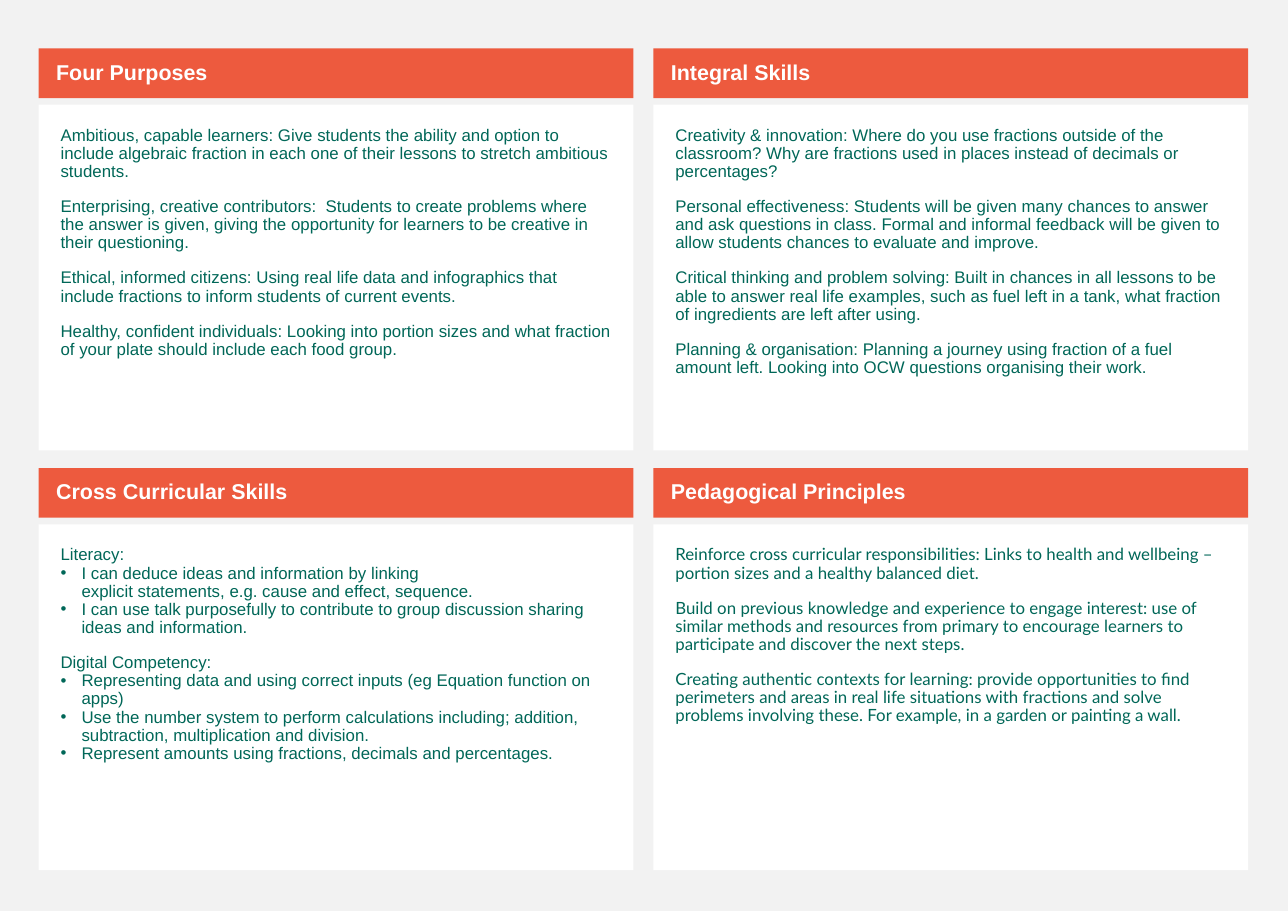
from dataclasses import dataclass

from lxml.etree import SubElement
from pptx import Presentation
from pptx.dml.color import RGBColor as RGB
from pptx.enum.text import MSO_ANCHOR as Anchor
from pptx.oxml.ns import qn
from pptx.util import Inches, Pt


@dataclass(frozen=True)
class Theme:
    page: RGB = RGB.from_string("F2F2F2")
    banner: RGB = RGB.from_string("ED5A3E")
    panel: RGB = RGB.from_string("FFFFFF")
    heading: RGB = RGB.from_string("FFFFFF")
    body: RGB = RGB.from_string("006758")
    heading_size: Pt = Pt(14)
    body_size: Pt = Pt(11)
    gap: Pt = Pt(11)


theme = Theme()
BULLET = "• "

# Each section: heading, body font, paragraphs (row by row); \v is a line break
sections = [
    ("Four Purposes", "Arial", [
        "Ambitious, capable learners: Give students the ability and option to include algebraic fraction in each one of their lessons to stretch ambitious students.",
        "Enterprising, creative contributors:  Students to create problems where the answer is given, giving the opportunity for learners to be creative in their questioning.",
        "Ethical, informed citizens: Using real life data and infographics that include fractions to inform students of current events.",
        "Healthy, confident individuals: Looking into portion sizes and what fraction of your plate should include each food group.",
    ]),
    ("Integral Skills", "Arial", [
        "Creativity & innovation: Where do you use fractions outside of the classroom? Why are fractions used in places instead of decimals or percentages?",
        "Personal effectiveness: Students will be given many chances to answer and ask questions in class. Formal and informal feedback will be given to allow students chances to evaluate and improve.",
        "Critical thinking and problem solving: Built in chances in all lessons to be able to answer real life examples, such as fuel left in a tank, what fraction of ingredients are left after using.",
        "Planning & organisation: Planning a journey using fraction of a fuel amount left. Looking into OCW questions organising their work.",
    ]),
    ("Cross Curricular Skills", "Arial", [
        "Literacy:",
        "• I can deduce ideas and information by linking\vexplicit statements, e.g. cause and effect, sequence.",
        "• I can use talk purposefully to contribute to group discussion sharing ideas and information.",
        "Digital Competency:",
        "• Representing data and using correct inputs (eg Equation function on apps)",
        "• Use the number system to perform calculations including; addition, subtraction, multiplication and division.",
        "• Represent amounts using fractions, decimals and percentages.",
    ]),
    ("Pedagogical Principles", "Lato", [
        "Reinforce cross curricular responsibilities: Links to health and wellbeing – portion sizes and a healthy balanced diet.",
        "Build on previous knowledge and experience to engage interest: use of similar methods and resources from primary to encourage learners to participate and discover the next steps.",
        "Creating authentic contexts for learning: provide opportunities to find perimeters and areas in real life situations with fractions and solve problems involving these. For example, in a garden or painting a wall.",
    ]),
]


def add_panel(left, top, height, fill, insets):
    """Add a filled, wrapping text box and return its text frame."""
    box = page.shapes.add_textbox(Inches(left), Inches(top), Inches(5.4), Inches(height))
    box.fill.solid()
    box.fill.fore_color.rgb = fill
    frame = box.text_frame
    frame.word_wrap = True
    frame.margin_left, frame.margin_top, frame.margin_right, frame.margin_bottom = map(Inches, insets)
    return frame


def write(para, text, font, size, color, bold=False):
    """Fill a paragraph; a leading bullet mark makes it a list item."""
    listed = text.startswith(BULLET)
    para.text = text.removeprefix(BULLET)
    para.line_spacing = 0.9
    para.space_before = Pt(0) if listed else theme.gap
    if listed:
        props = para._p.get_or_add_pPr()
        props.set("marL", str(Inches(0.19)))
        props.set("indent", str(Inches(-0.19)))
        SubElement(props, qn("a:buFont")).set("typeface", "Arial")
        SubElement(props, qn("a:buChar")).set("char", BULLET.strip())
    para.font.name = font
    para.font.size = size
    para.font.bold = bold
    para.font.color.rgb = color


# Page
deck = Presentation()
deck.slide_width, deck.slide_height = Inches(11.69), Inches(8.27)
page = deck.slides.add_slide(deck.slide_layouts[6])
page.background.fill.solid()
page.background.fill.fore_color.rgb = theme.page

# Two-by-two grid of sections
for index, (heading, font, paragraphs) in enumerate(sections):
    row, column = divmod(index, 2)
    left = 0.35 + column * 5.58
    top = 0.44 + row * 3.81

    # Heading banner
    banner = add_panel(left, top, 0.45, theme.banner, (0.16, 0.05, 0.1, 0.05))
    banner.vertical_anchor = Anchor.MIDDLE
    write(banner.paragraphs[0], heading, "Arial", theme.heading_size, theme.heading, bold=True)

    # Body text
    body = add_panel(left, top + 0.51, 3.14, theme.panel, (0.2, 0.2, 0.19, 0.2))
    for number, text in enumerate(paragraphs):
        para = body.add_paragraph() if number else body.paragraphs[0]
        write(para, text, font, theme.body_size, theme.body)

deck.save("out.pptx")
